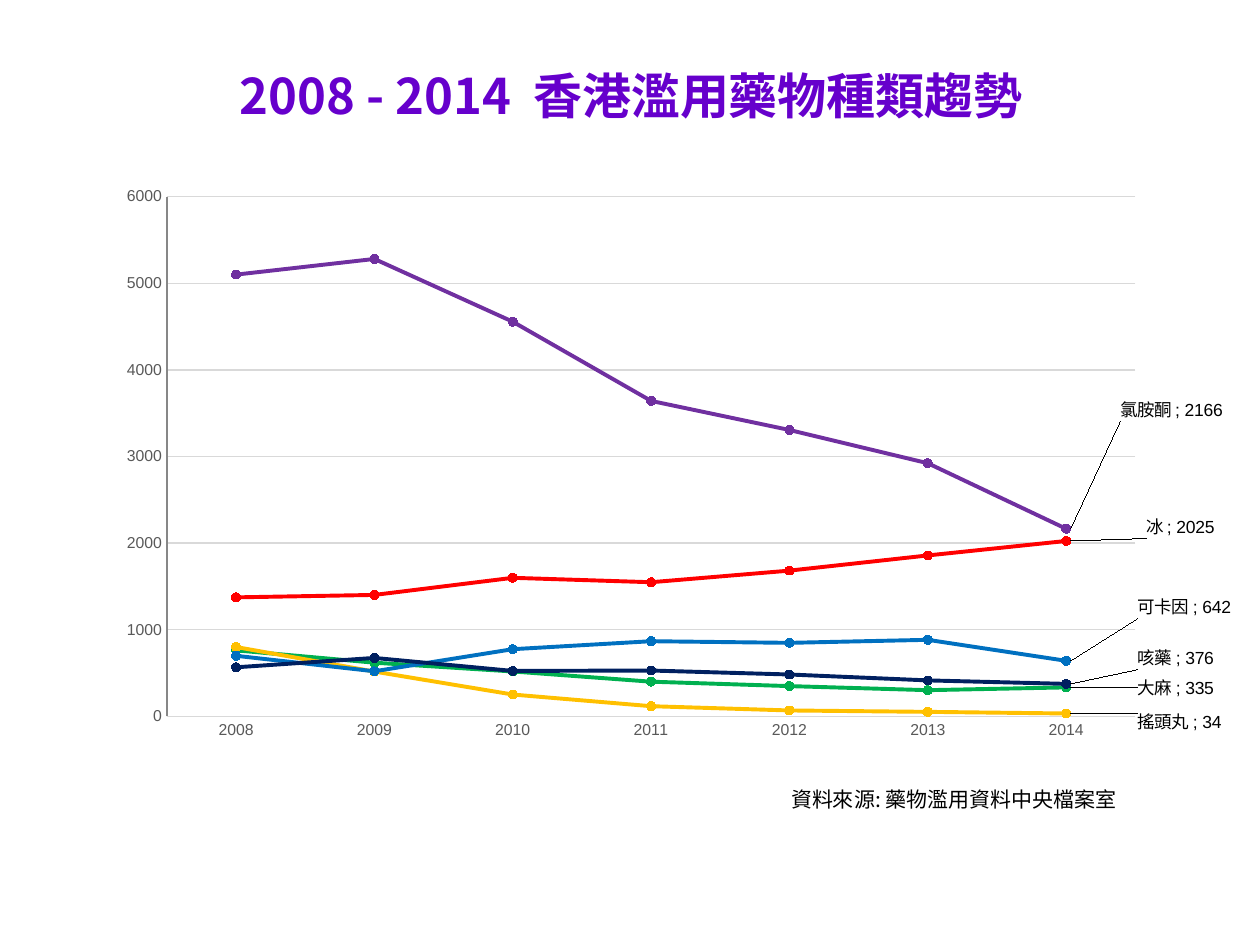
from lxml import etree
from pptx import Presentation
from pptx import util as u
from pptx.chart import data as chart_data
from pptx.dml import color
from pptx.enum import chart as charts, text
from pptx.oxml import parse_xml
from pptx.oxml import ns

COLORS = {"title": "6600CC", "ink": "000000", "axis": "595959", "grid": "D9D9D9",
          "ketamine": "7030A0", "cannabis": "00B050", "ecstasy": "FFC000",
          "ice": "FF0000", "cocaine": "0070C0", "cough": "002060"}
YEARS = [str(year) for year in range(2008, 2015)]
DRUGS = [
    ("氯胺酮", "ketamine", (5099, 5280, 4556, 3642, 3306, 2922, 2166), (0.038, -0.192)),
    ("大麻", "cannabis", (763, 620, 519, 401, 350, 303, 335), (0.053, 0)),
    ("搖頭丸", "ecstasy", (801, 518, 253, 118, 69, 53, 34), (0.053, 0.013)),
    ("冰", "ice", (1374, 1402, 1600, 1549, 1683, 1858, 2025), (0.06, -0.024)),
    ("可卡因", "cocaine", (700, 521, 776, 868, 849, 884, 642), (0.053, -0.088)),
    ("咳藥", "cough", (567, 675, 525, 530, 484, 416, 376), (0.053, -0.043)),
]
PLOT = (0.084, 0.107, 0.823, 0.832)
LABEL = """<c:dLbl {ns}><c:idx val="{index}"/>
<c:layout><c:manualLayout><c:x val="{dx}"/><c:y val="{dy}"/></c:manualLayout></c:layout>
<c:dLblPos val="r"/><c:showLegendKey val="0"/><c:showVal val="1"/><c:showCatName val="0"/>
<c:showSerName val="1"/><c:showPercent val="0"/><c:showBubbleSize val="0"/>
<c:separator> ; </c:separator></c:dLbl>"""
LEADERS = """<c:extLst {ns}><c:ext uri="{{CE6537A1-D6FC-4f65-9D91-7224C49458BB}}"
xmlns:c15="http://schemas.microsoft.com/office/drawing/2012/chart">
<c15:showLeaderLines val="1"/></c:ext></c:extLst>"""
LAYOUT = """<c:layout {ns}><c:manualLayout><c:layoutTarget val="inner"/>
<c:xMode val="edge"/><c:yMode val="edge"/><c:x val="{0}"/><c:y val="{1}"/>
<c:w val="{2}"/><c:h val="{3}"/></c:manualLayout></c:layout>"""


def chart_xml(template, *values, **names):
    return parse_xml(template.format(*values, ns=ns.nsdecls("c"), **names))


class TrendSlide:
    """Holds the slide style and adds each kind of element to the page."""

    def __init__(self, page):
        self.page = page
        self.heading_font = "Noto Sans CJK SC"
        self.chart_font = "Arial"

    def rgb(self, name):
        return color.RGBColor.from_string(COLORS[name])

    def style(self, font, face, size, name, bold=False):
        font.name, font.size, font.bold = face, u.Pt(size), bold
        font.color.rgb = self.rgb(name)

    def text(self, words, place, size, name, bold=False,
             align=text.PP_ALIGN.LEFT, anchor=text.MSO_ANCHOR.TOP):
        box = self.page.shapes.add_textbox(*map(u.Inches, place))
        frame = box.text_frame
        frame.word_wrap = True
        frame.vertical_anchor = anchor
        para = frame.paragraphs[0]
        span = para.add_run()
        span.text = words
        para.alignment = align
        self.style(span.font, self.heading_font, size, name, bold)
        east = etree.SubElement(span.font._element, ns.qn("a:ea"))
        east.set("typeface", self.heading_font)

    def axis(self, axis):
        axis.major_tick_mark = axis.minor_tick_mark = charts.XL_TICK_MARK.NONE
        self.style(axis.tick_labels.font, self.chart_font, 9, "axis")

    def line(self, line, name, width):
        line.color.rgb = self.rgb(name)
        line.width = u.Pt(width)

    def series(self, series, name, offset):
        series.smooth = False
        self.line(series.format.line, name, 2.25)
        marker = series.marker
        marker.style, marker.size = charts.XL_MARKER_STYLE.CIRCLE, 5
        marker.format.fill.solid()
        marker.format.fill.fore_color.rgb = self.rgb(name)
        self.line(marker.format.line, name, 0.75)
        labels = series.data_labels
        labels.show_value = False
        self.style(labels.font, self.chart_font, 10, "ink")
        dx, dy = offset
        labels._element.insert(0, chart_xml(LABEL, index=len(YEARS) - 1, dx=dx, dy=dy))
        labels._element.append(chart_xml(LEADERS))

    def line_chart(self, place):
        data = chart_data.CategoryChartData()
        data.categories = YEARS
        for label, _, values, _ in DRUGS:
            data.add_series(label, values)
        frame = self.page.shapes.add_chart(
            charts.XL_CHART_TYPE.LINE_MARKERS, *map(u.Inches, place), data)
        chart = frame.chart
        chart.has_legend = chart.has_title = False
        self.style(chart.font, self.chart_font, 10, "ink")
        plot = chart.plots[0]
        plot.vary_by_categories = False
        area = plot._element.getparent()
        for old in area.findall(ns.qn("c:layout")):
            area.remove(old)
        area.insert(0, chart_xml(LAYOUT, *PLOT))
        self.axis(chart.category_axis)
        self.line(chart.category_axis.format.line, "grid", 0.75)
        scale = chart.value_axis
        self.axis(scale)
        scale.minimum_scale, scale.maximum_scale, scale.major_unit = 0, 6000, 1000
        self.line(scale.major_gridlines.format.line, "grid", 0.75)
        for series, (_, name, _, offset) in zip(plot.series, DRUGS):
            self.series(series, name, offset)


def main():
    deck = Presentation()
    deck.slide_width, deck.slide_height = u.Inches(10), u.Inches(7.5)
    slide = TrendSlide(deck.slides.add_slide(deck.slide_layouts[6]))
    slide.line_chart((0.54, 1.03, 9.34, 4.96))
    slide.text("2008 - 2014  香港濫用藥物種類趨勢", (0.51, 0.13, 9, 1.25), 28, "title",
               bold=True, align=text.PP_ALIGN.CENTER, anchor=text.MSO_ANCHOR.MIDDLE)
    slide.text("資料來源: 藥物濫用資料中央檔案室", (6.18, 6.19, 2.82, 0.3), 12, "ink")
    deck.save("out.pptx")


if __name__ == "__main__":
    main()
